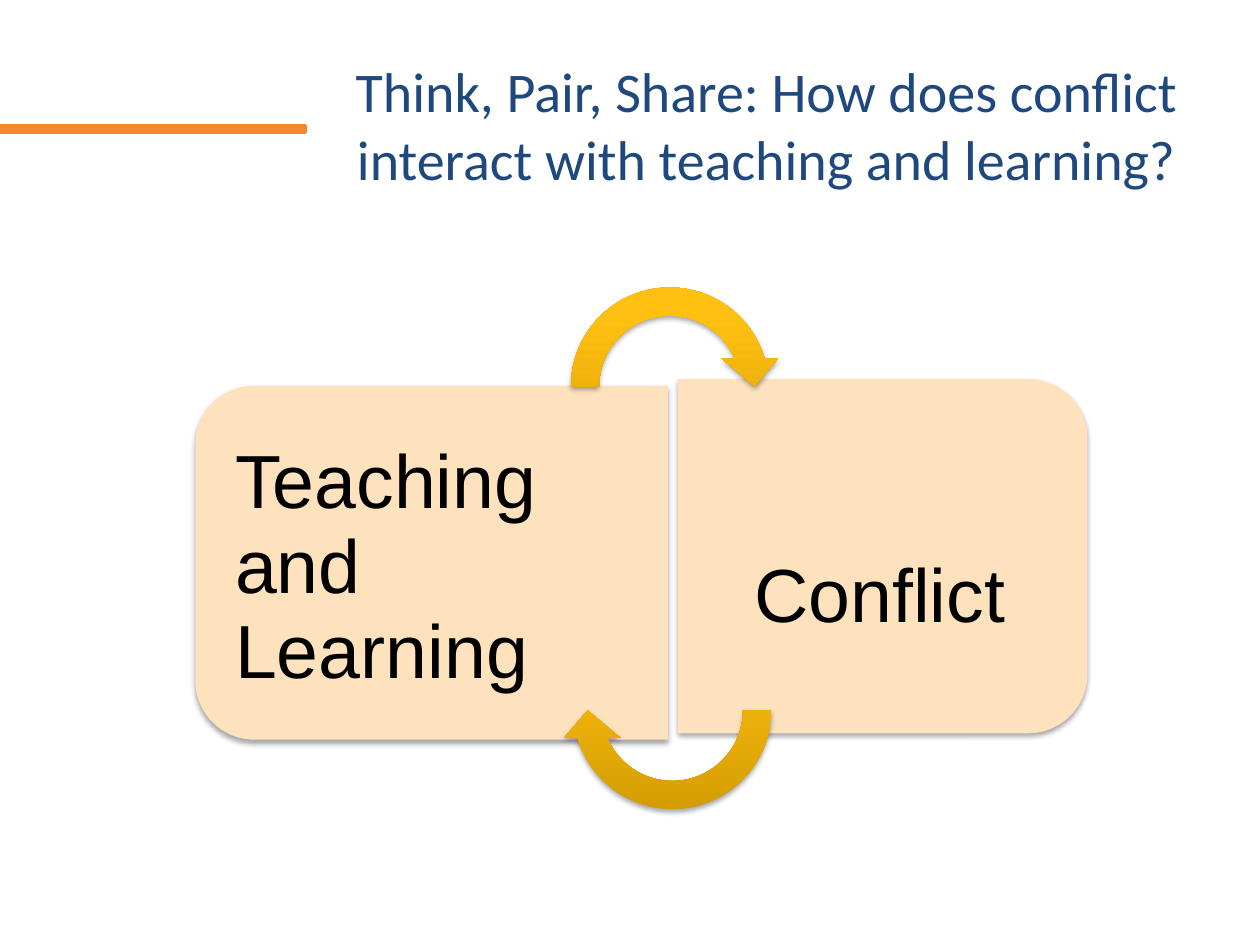
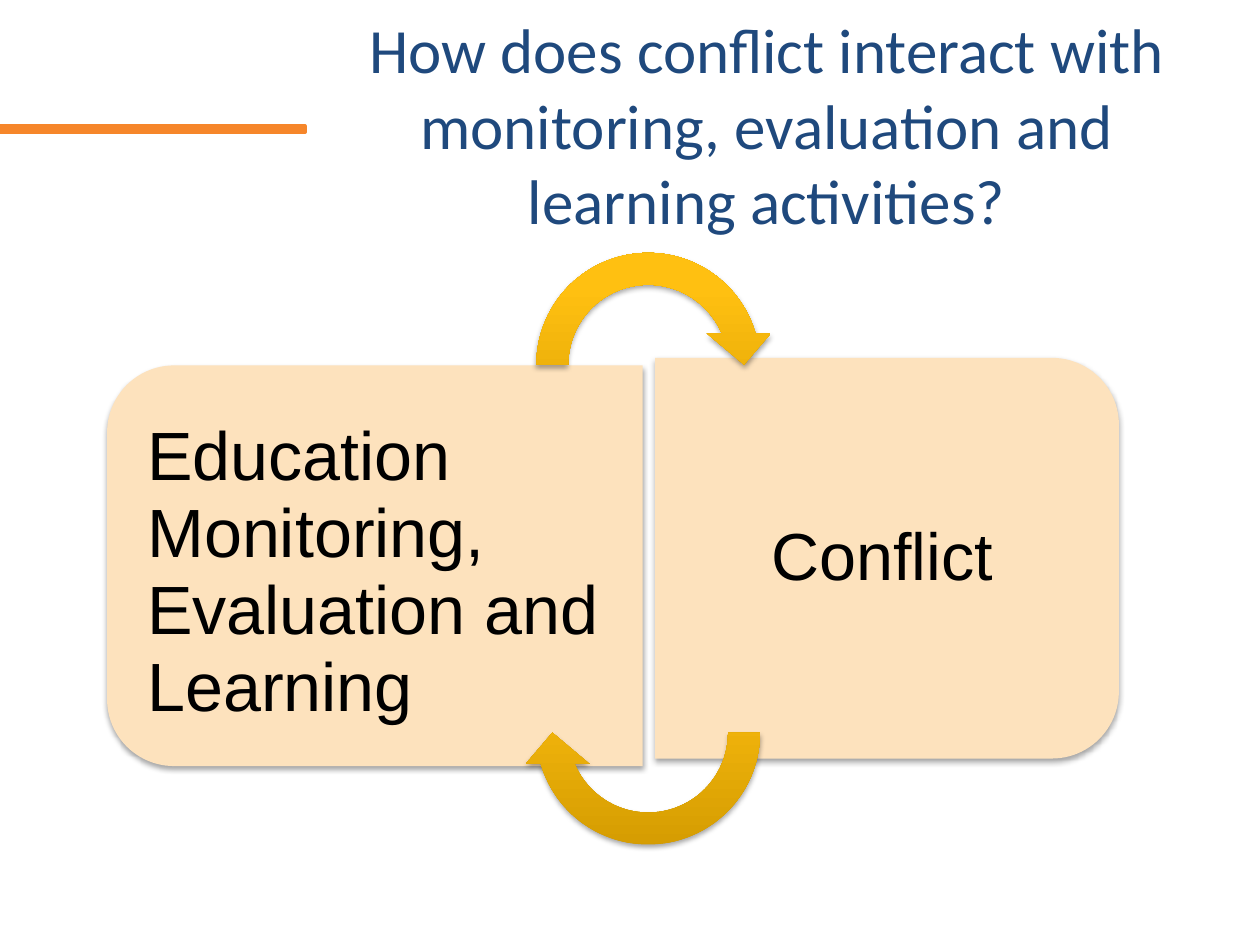
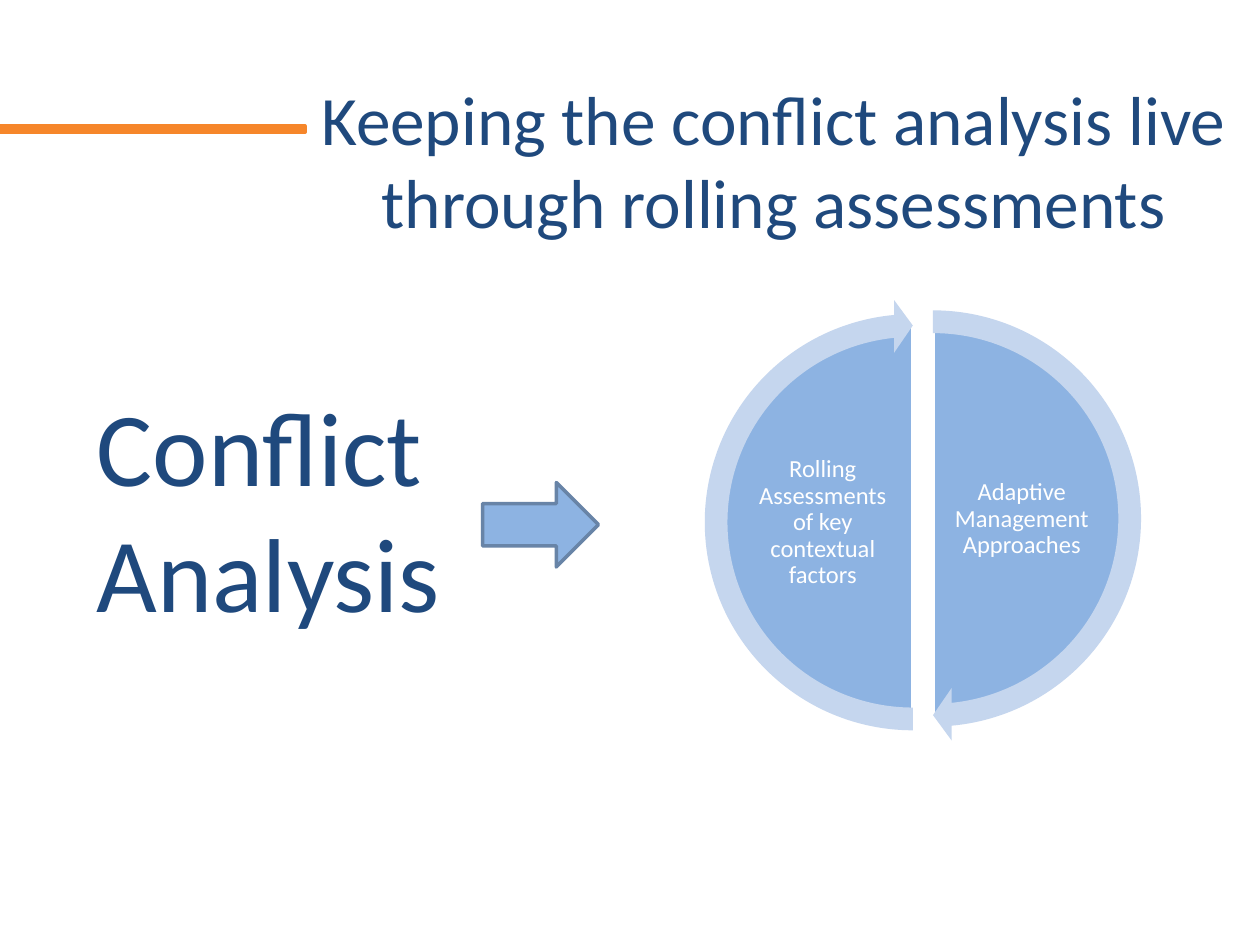
from dataclasses import dataclass

from pptx import Presentation
from pptx.dml.color import RGBColor
from pptx.enum.shapes import MSO_SHAPE
from pptx.enum.text import MSO_ANCHOR, PP_ALIGN
from pptx.oxml import parse_xml
from pptx.oxml.ns import nsdecls, qn
from pptx.util import Inches, Pt

RECTANGLE = MSO_SHAPE.RECTANGLE
HALF_ROUNDED = MSO_SHAPE.ROUND_2_SAME_RECTANGLE
CIRCULAR_ARROW = MSO_SHAPE.CIRCULAR_ARROW
PIE = MSO_SHAPE.PIE
RIGHT_ARROW = MSO_SHAPE.RIGHT_ARROW
TOP, MIDDLE = MSO_ANCHOR.TOP, MSO_ANCHOR.MIDDLE
LEFT, CENTER = PP_ALIGN.LEFT, PP_ALIGN.CENTER


@dataclass(frozen=True)
class Theme:
    heading_font: str = "Calibri"
    diagram_font: str = "Arial"
    navy: str = "1F497D"
    orange: str = "F6862A"
    peach: str = "FDE2BD"
    black: str = "000000"
    white: str = "FFFFFF"
    blue: str = "8DB3E2"
    pale_blue: str = "C5D6EE"
    steel: str = "6884A7"
    gold_stops: tuple = ((0, "D29A00"), (80, "FFC011"), (100, "FFC013"))
    cycle_size: float = 14
    source_size: float = 60
    line_width: float = 2


THEME = Theme()


def set_values(target, values):
    for name, value in values.items():
        setattr(target, name, value)


def add_text(slide, box, text, size, color, font=THEME.heading_font, align=LEFT,
             anchor=TOP, insets=(0.1, 0.05, 0.1, 0.05), spacing=1.0):
    """Insets run left, top, right, bottom."""
    frame = slide.shapes.add_textbox(*map(Inches, box)).text_frame
    left, top, right, bottom = map(Inches, insets)
    set_values(frame, {"word_wrap": True, "vertical_anchor": anchor,
                       "margin_left": left, "margin_top": top,
                       "margin_right": right, "margin_bottom": bottom})
    paragraph = frame.paragraphs[0]
    set_values(paragraph, {"text": text, "alignment": align, "line_spacing": spacing})
    run_font = paragraph.runs[0].font
    set_values(run_font, {"name": font, "size": Pt(size)})
    run_font.color.rgb = RGBColor.from_string(color)


def add_figure(slide, preset, box, fill=None, line=None, adjustments=(), rotation=0):
    figure = slide.shapes.add_shape(preset, *map(Inches, box))
    figure.shadow.inherit = False
    figure.rotation = rotation
    for index, value in enumerate(adjustments):
        figure.adjustments[index] = value
    if fill:
        figure.fill.solid()
        figure.fill.fore_color.rgb = RGBColor.from_string(fill)
    if line:
        figure.line.color.rgb = RGBColor.from_string(line)
        figure.line.width = Pt(THEME.line_width)
    else:
        figure.line.fill.background()
    return figure


def add_soft_shadow(figure):
    effects = figure.element.spPr.find(qn("a:effectLst"))
    effects.append(parse_xml(
        f'<a:outerShdw {nsdecls("a")} blurRad="{Pt(3.1)}" dist="{Pt(1.8)}" dir="5400000" '
        f'rotWithShape="0"><a:srgbClr val="{THEME.black}"><a:alpha val="35000"/>'
        '</a:srgbClr></a:outerShdw>'))


def fill_gold(figure):
    stops = "".join(f'<a:gs pos="{pos * 1000}"><a:srgbClr val="{color}"/></a:gs>'
                    for pos, color in THEME.gold_stops)
    gradient = parse_xml(
        f'<a:gradFill {nsdecls("a")} rotWithShape="0"><a:gsLst>{stops}</a:gsLst>'
        '<a:lin ang="16200000" scaled="0"/></a:gradFill>')
    figure.element.spPr.find(qn("a:prstGeom")).addnext(gradient)


def add_titled_slide(deck, title, size, box=(2.67, 0.3, 6.83, 1.37)):
    slide = deck.slides.add_slide(deck.slide_layouts[6])
    add_figure(slide, RECTANGLE, (0, 1, 2.42, 0.05), THEME.orange, THEME.orange)
    add_text(slide, box, title, size, THEME.navy, align=CENTER, anchor=MIDDLE)
    return slide


def add_half(slide, box, label, size, rounded_left, drop=0):
    """One half of the pair; the preset is upright, so it is turned on its side."""
    left, top, width, height = box
    upright = (left + (width - height) / 2, top + (height - width) / 2, height, width)
    panel = add_figure(slide, HALF_ROUNDED, upright, THEME.peach,
                       adjustments=(0.167, 0), rotation=270 if rounded_left else 90)
    add_soft_shadow(panel)

    # Label area keeps clear of the rounded corners
    pad = 0.049 * height
    label_box = (left + pad * rounded_left, top + pad, width - pad, height - 2 * pad)
    outer, inner, edge = size / 240, size / 160, size / 144
    if rounded_left:
        layout = {"align": LEFT, "anchor": TOP, "insets": (outer, edge, inner, edge)}
    else:
        layout = {"align": CENTER, "anchor": MIDDLE,
                  "insets": (inner, edge + drop, outer, edge)}
    add_text(slide, label_box, label, size, THEME.black, THEME.diagram_font,
             spacing=0.94, **layout)


def add_interaction(slide, topic, conflict, arrow_corners):
    add_half(slide, rounded_left=True, **topic)
    add_half(slide, rounded_left=False, label="Conflict", **conflict)

    # Arrows: over the top, then back underneath
    span = 0.638 * topic["box"][3]
    for corner, rotation in zip(arrow_corners, (0, 180)):
        arrow = add_figure(slide, CIRCULAR_ARROW, (*corner, span, span), rotation=rotation,
                           adjustments=(0.125, 11.423, 204.577, 108, 0.125))
        fill_gold(arrow)
        add_soft_shadow(arrow)


def add_cycle(slide, left, top):
    diameter, ring_gap = 3.15, 0.195
    # Offset of the half, label offset, start and end angles, arrow end, label
    halves = (
        (0.16, 0, 1.72, (162, 54), 50.725, "Adaptive Management Approaches"),
        (0, 0.03, 0.3, (54, 162), 158.725, "Rolling Assessments of key contextual factors"),
    )
    for dx, dy, label_dx, angles, _, label in halves:
        x, y = left + dx, top + dy
        add_figure(slide, PIE, (x, y, diameter, diameter), THEME.blue, THEME.white, angles)
        add_text(slide, (x + label_dx, y + 0.83, 1.12, 1.5), label, THEME.cycle_size,
                 THEME.white, align=CENTER, anchor=MIDDLE, insets=(0.02,) * 4, spacing=0.9)

    # Ring arrows around both halves
    ring = diameter + 2 * ring_gap
    for dx, dy, _, (start, _), arrow_end, _ in halves:
        add_figure(slide, CIRCULAR_ARROW,
                   (left + dx - ring_gap, top + dy - ring_gap, ring, ring),
                   THEME.pale_blue, adjustments=(0.051, 3.275, arrow_end, start, 0.059))


def add_analysis_source(slide, left, top):
    add_text(slide, (left, top, 4.08, 2.12), "Conflict Analysis", THEME.source_size, THEME.navy)
    add_figure(slide, RIGHT_ARROW, (left + 3.16, top + 0.85, 0.92, 0.67),
               THEME.blue, THEME.steel)


def main():
    deck = Presentation()
    set_values(deck, {"slide_width": Inches(10), "slide_height": Inches(7.5)})

    # Teaching and learning
    slide = add_titled_slide(
        deck, "Think, Pair, Share: How does conflict interact with teaching and learning?", 32)
    add_interaction(
        slide,
        {"box": (1.55, 3.06, 3.75, 2.81), "label": "Teaching and Learning", "size": 43},
        {"box": (5.38, 3.01, 3.25, 2.81), "size": 43, "drop": 0.65},
        ((4.42, 2.17), (4.44, 4.74)))

    # Monitoring and evaluation
    slide = add_titled_slide(
        deck, "How does conflict interact with monitoring, evaluation and learning activities?", 36)
    add_interaction(
        slide,
        {"box": (0.85, 2.9, 4.25, 3.18), "size": 39,
         "label": "Education Monitoring, Evaluation and Learning"},
        {"box": (5.2, 2.84, 3.68, 3.18), "size": 38},
        ((4.13, 1.88), (4.13, 4.8)))

    # Rolling assessments
    slide = add_titled_slide(
        deck, "Keeping the conflict analysis live through rolling assessments", 39.6,
        (2.28, 0.58, 7.72, 1.37))
    add_cycle(slide, 5.67, 2.54)
    add_analysis_source(slide, 0.67, 2.98)

    deck.save("out.pptx")


if __name__ == "__main__":
    main()
